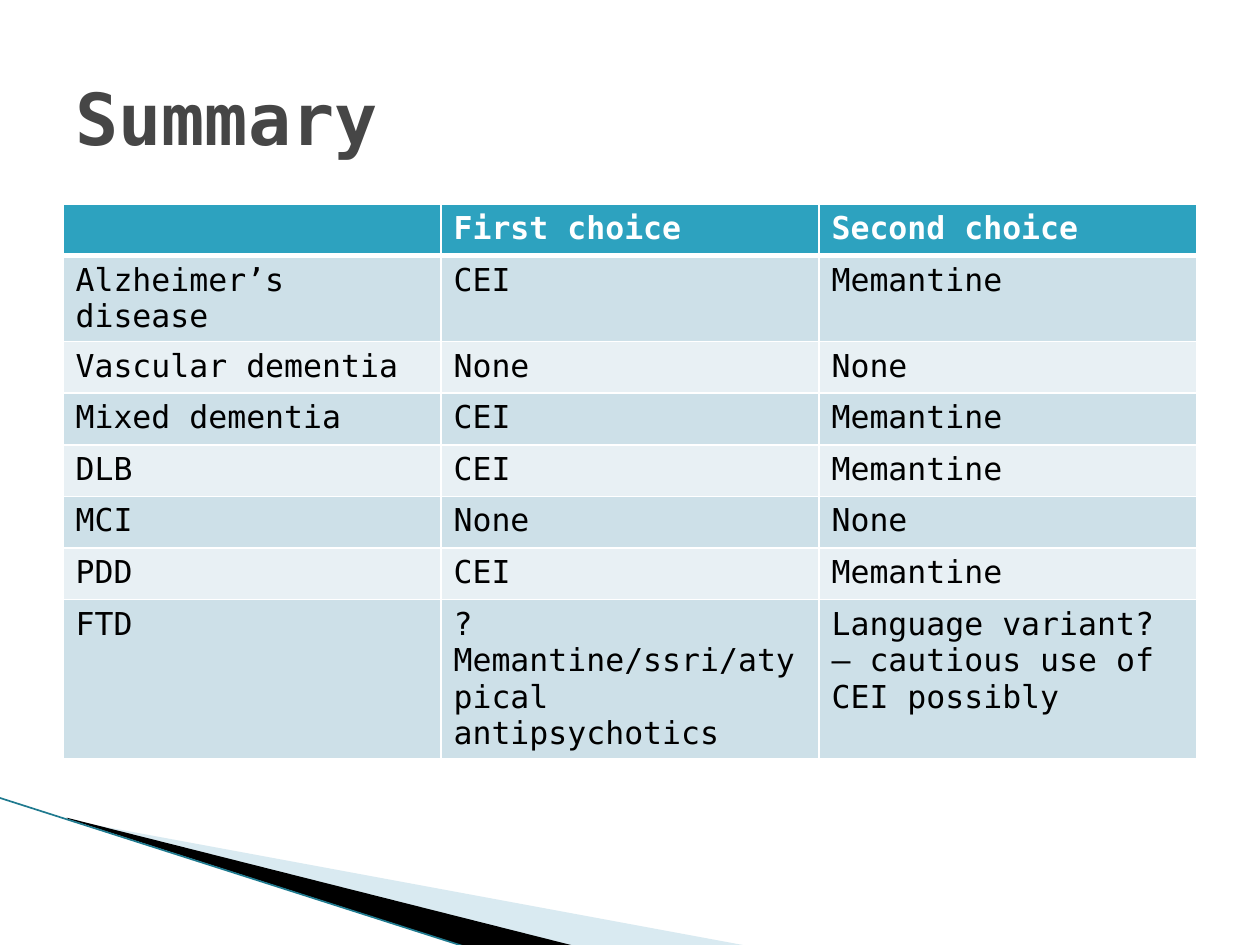
from lxml import etree
from pptx import Presentation
from pptx.dml.color import RGBColor
from pptx.enum import text
from pptx.oxml import ns
from pptx.util import Inches, Pt

FONT = "DejaVu Sans Mono"
HUES = {
    "white": "FFFFFF", "black": "000000", "title": "464646", "head": "2DA2BF",
    "dark": "CDE0E8", "light": "E8F0F4", "pale": "A0CBDC", "edge": "1F7A8F",
}


def hue(name):
    return RGBColor.from_string(HUES[name])


def style(para, size, name, bold):
    para.font.name = FONT
    para.font.size = Pt(size)
    para.font.bold = bold
    para.font.color.rgb = hue(name)


deck = Presentation()
deck.slide_width, deck.slide_height = Inches(10), Inches(7.5)
slide = deck.slides.add_slide(deck.slide_layouts[6])

wedges = [
    ("pale", [(0.55, 6.51), (5.95, 7.51), (4.56, 7.51), (0.55, 6.5)]),
    ("black", [(0.53, 6.49), (4.57, 7.51), (3.72, 7.52), (0.54, 6.5)]),
]
for name, points in wedges:
    spots = [(Inches(x), Inches(y)) for x, y in points]
    pen = slide.shapes.build_freeform(*spots[0])
    pen.add_line_segments(spots[1:], close=True)
    wedge = pen.convert_to_shape()
    wedge.shadow.inherit = False
    wedge.line.fill.background()
    wedge.fill.solid()
    wedge.fill.fore_color.rgb = hue(name)
    if name == "pale":
        tint = wedge.fill._xPr.find(".//" + ns.qn("a:srgbClr"))
        etree.SubElement(tint, ns.qn("a:alpha"), val="40000")

edge = slide.shapes.add_connector(1, Inches(-0.01), Inches(6.33), Inches(3.71), Inches(7.52))
edge.line.color.rgb = hue("edge")
edge.line.width = Pt(0.95)
etree.SubElement(edge._element.spPr, ns.qn("a:effectLst"))

rows = [
    ("", "First choice", "Second choice"),
    ("Alzheimer’s disease", "CEI", "Memantine"),
    ("Vascular dementia", "None", "None"),
    ("Mixed dementia", "CEI", "Memantine"),
    ("DLB", "CEI", "Memantine"),
    ("MCI", "None", "None"),
    ("PDD", "CEI", "Memantine"),
    ("FTD", "? Memantine/ssri/atypical antipsychotics",
     "Language variant? – cautious use of CEI possibly"),
]
table = slide.shapes.add_table(
    len(rows), 3, Inches(0.5), Inches(1.62), Inches(9), Inches(0.41) * len(rows)
).table
for r, row in enumerate(rows):
    band = "head" if r == 0 else "dark" if r % 2 else "light"
    for c, words in enumerate(row):
        cell = table.cell(r, c)
        cell.text = words
        style(cell.text_frame.paragraphs[0], 18, "black" if r else "white", r == 0)
        props = cell._tc.get_or_add_tcPr()
        for side in "LRTB":
            thick = (r, side) in [(0, "B"), (1, "T")]
            rule = etree.SubElement(props, ns.qn("a:ln" + side), w=str(Pt(3 if thick else 1)))
            paint = etree.SubElement(rule, ns.qn("a:solidFill"))
            etree.SubElement(paint, ns.qn("a:srgbClr"), val=HUES["white"])
        cell.fill.solid()
        cell.fill.fore_color.rgb = hue(band)

title = slide.shapes.add_textbox(Inches(0.5), Inches(0.3), Inches(9), Inches(1.25))
frame = title.text_frame
frame.word_wrap = True
frame.vertical_anchor = text.MSO_ANCHOR.MIDDLE
frame.text = "Summary"
style(frame.paragraphs[0], 41, "title", True)

deck.save("out.pptx")
